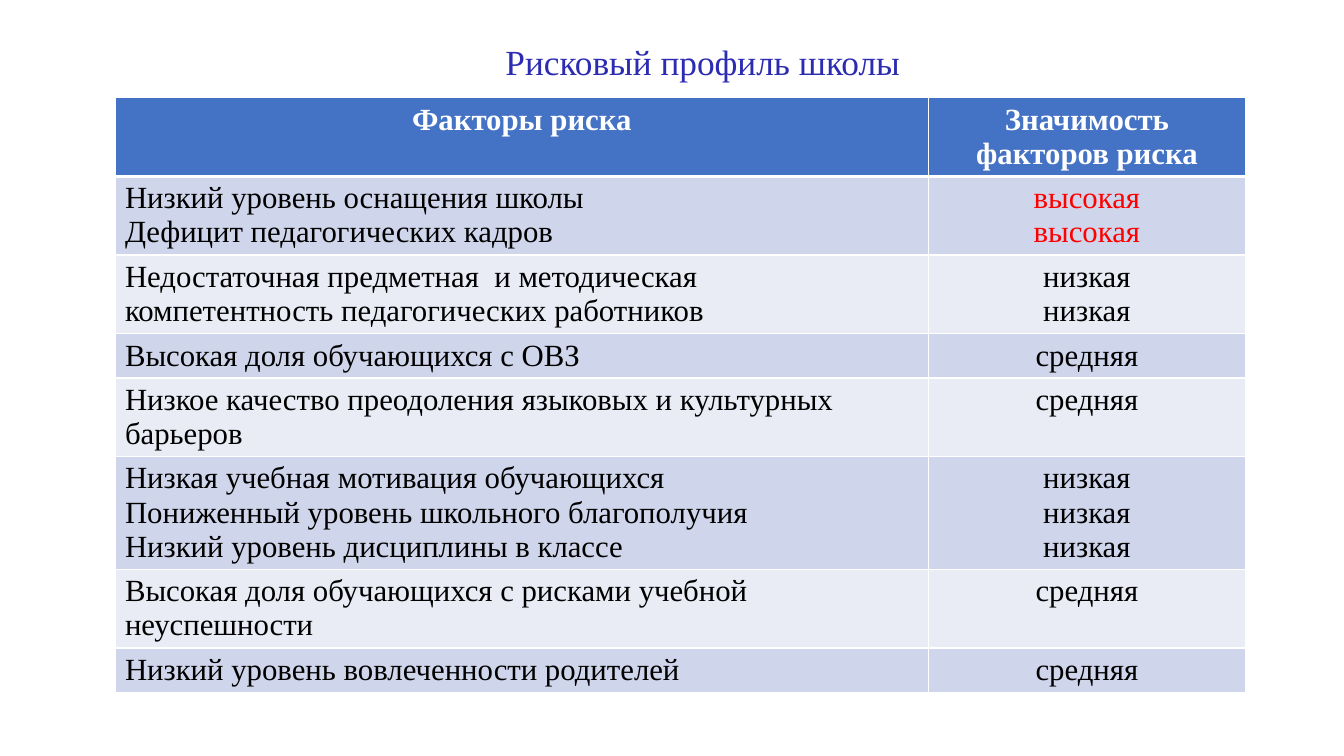
from lxml import etree
from pptx import Presentation
from pptx.dml.color import RGBColor
from pptx.enum import text
from pptx.oxml.ns import qn
from pptx.util import Inches, Pt

FONT = "Times New Roman"
COLORS = {
    "title": "2C2CB2", "head": "4472C4", "white": "FFFFFF", "black": "000000",
    "high": "FF0000", "odd": "CFD5EA", "even": "E9EBF5",
}
TITLE = "Рисковый профиль школы"
# risk factors, their weight, number of text lines in the row
ROWS = [
    ("Факторы риска", "Значимость факторов риска", 2),
    ("Низкий уровень оснащения школы\nДефицит педагогических кадров",
     "высокая\nвысокая", 2),
    ("Недостаточная предметная  и методическая  компетентность "
     "педагогических работников", "низкая\nнизкая", 2),
    ("Высокая доля обучающихся с ОВЗ", "средняя", 1),
    ("Низкое качество преодоления языковых и культурных барьеров",
     "средняя", 2),
    ("Низкая учебная мотивация обучающихся\n"
     "Пониженный уровень школьного благополучия\n"
     "Низкий уровень дисциплины в классе", "низкая\nнизкая\nнизкая", 3),
    ("Высокая доля обучающихся с рисками учебной неуспешности",
     "средняя", 2),
    ("Низкий уровень вовлеченности родителей", "средняя", 1),
]
WIDTHS = (8.07, 3.14)
LINE, PAD = 0.34, 0.1


def rgb(name):
    return RGBColor.from_string(COLORS[name])


def style(frame, size, color, align, bold=False):
    for para in frame.paragraphs:
        para.alignment = align
        for run in para.runs:
            run.font.name = FONT
            run.font.size = Pt(size)
            run.font.bold = bold
            run.font.color.rgb = rgb(color)


def edge(cell, side, width):
    """Give one side of a cell a white line."""
    line = etree.SubElement(cell._tc.get_or_add_tcPr(), qn("a:ln" + side),
                            w=str(Pt(width)))
    fill = etree.SubElement(line, qn("a:solidFill"))
    etree.SubElement(fill, qn("a:srgbClr"), val=COLORS["white"])


deck = Presentation()
deck.slide_width, deck.slide_height = Inches(13.33), Inches(7.5)
slide = deck.slides.add_slide(deck.slide_layouts[5])

title = slide.shapes.title
title.left, title.top = Inches(0.92), Inches(0.4)
title.width, title.height = Inches(12.1), Inches(0.82)
frame = title.text_frame
frame.text = TITLE
frame.auto_size = text.MSO_AUTO_SIZE.NONE
frame.vertical_anchor = text.MSO_ANCHOR.TOP
frame.paragraphs[0].line_spacing = 0.9
style(frame, 25.2, "title", text.PP_ALIGN.CENTER)

heights = [PAD + LINE * lines for _, _, lines in ROWS]
table = slide.shapes.add_table(
    len(ROWS), len(WIDTHS), Inches(1.14), Inches(0.97),
    Inches(sum(WIDTHS)), Inches(sum(heights))).table
for col, width in zip(table.columns, WIDTHS):
    col.width = Inches(width)

for i, (factor, weight, _) in enumerate(ROWS):
    table.rows[i].height = Inches(heights[i])
    head = i == 0
    back = "head" if head else "odd" if i % 2 else "even"
    for j, words in enumerate((factor, weight)):
        cell = table.cell(i, j)
        cell.text_frame.text = words
        if head:
            color = "white"
        else:
            color = "high" if words.startswith("высокая") else "black"
        center = head or j == 1
        align = text.PP_ALIGN.CENTER if center else text.PP_ALIGN.LEFT
        style(cell.text_frame, 22, color, align, head)
        for side in "LRTB":
            thick = (head and side == "B") or (i == 1 and side == "T")
            edge(cell, side, 3 if thick else 1)
        cell.fill.solid()
        cell.fill.fore_color.rgb = rgb(back)

deck.save("out.pptx")
